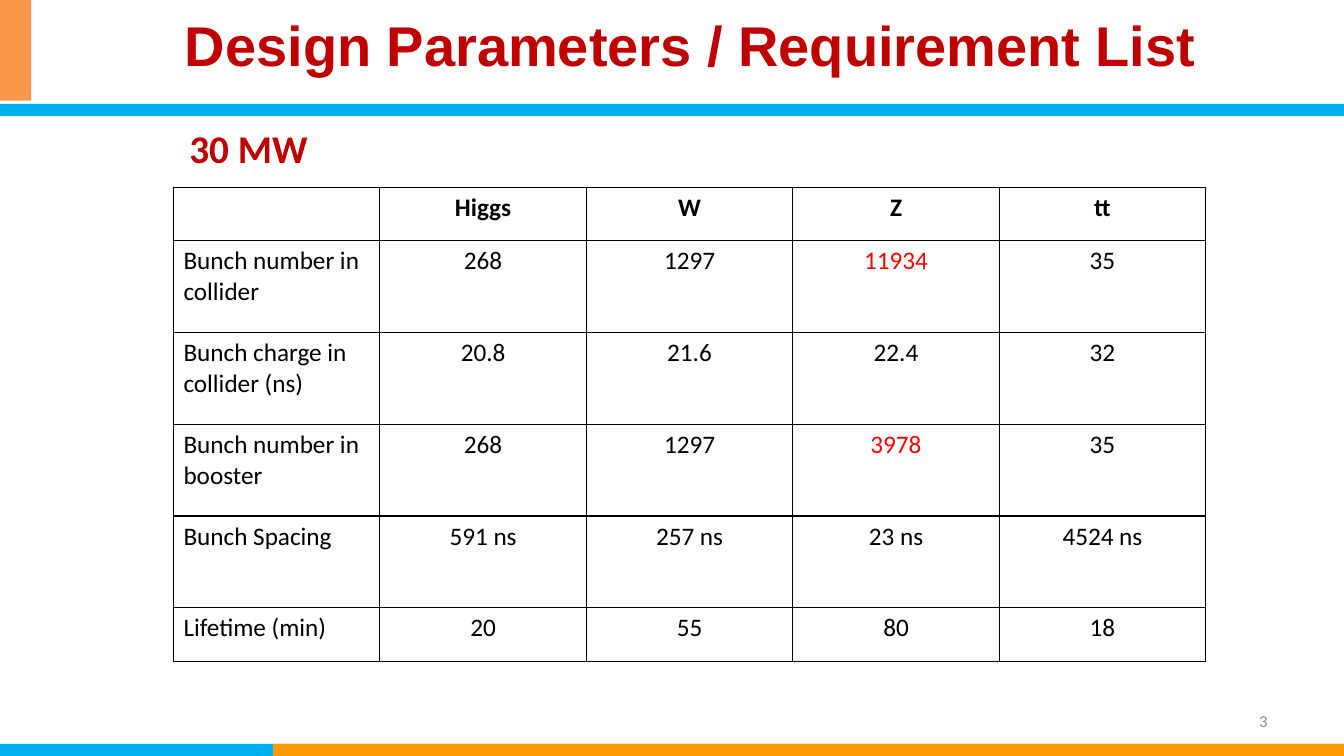
from dataclasses import dataclass

from lxml import etree
from pptx import Presentation
from pptx.dml.color import RGBColor
from pptx.enum.shapes import MSO_SHAPE
from pptx.enum.text import MSO_ANCHOR, PP_ALIGN
from pptx.oxml.ns import qn
from pptx.util import Inches, Pt

RECT = MSO_SHAPE.RECTANGLE
TOP, MIDDLE = MSO_ANCHOR.TOP, MSO_ANCHOR.MIDDLE
LEFT, CENTER, RIGHT = PP_ALIGN.LEFT, PP_ALIGN.CENTER, PP_ALIGN.RIGHT


@dataclass(frozen=True)
class Theme:
    blue: str = "00B0F0"
    orange: str = "FF9900"
    peach: str = "F79646"
    white: str = "FFFFFF"
    crimson: str = "C00000"
    red: str = "FF0000"
    black: str = "000000"
    grey: str = "8C8C8C"
    head: str = "Arial"
    body: str = "Calibri"
    title: int = 40
    label: int = 28
    cell: int = 18
    small: int = 12


THEME = Theme()


@dataclass(frozen=True)
class Box:
    left: float
    top: float
    width: float
    height: float

    def place(self) -> list:
        return [Inches(v) for v in (self.left, self.top, self.width, self.height)]


@dataclass(frozen=True)
class Band:
    box: Box
    color: str


@dataclass(frozen=True)
class Style:
    size: int
    color: str
    font: str = THEME.body
    bold: bool = False
    align: PP_ALIGN = LEFT
    anchor: MSO_ANCHOR = TOP
    space: float = 1.0


@dataclass(frozen=True)
class Label:
    box: Box
    text: str
    style: Style


BANDS = [
    Band(Box(0, 7.38, 13.33, 0.12), THEME.blue),
    Band(Box(2.71, 7.38, 10.63, 0.12), THEME.orange),
    Band(Box(0, 1.03, 13.33, 0.12), THEME.blue),
    Band(Box(0, 0, 0.31, 1), THEME.peach),
]
TITLE = Label(
    Box(0.45, 0.08, 12.79, 0.8),
    "Design Parameters / Requirement List",
    Style(THEME.title, THEME.crimson, THEME.head, True, CENTER, MIDDLE, 0.9),
)
LABELS = [
    Label(Box(1.78, 1.18, 5.67, 0.57), "30 MW",
          Style(THEME.label, THEME.crimson, bold=True)),
    Label(Box(9.56, 6.95, 3.11, 0.4), "3",
          Style(THEME.small, THEME.grey, align=RIGHT, anchor=MIDDLE)),
]
GRID = Box(1.72, 1.86, 10.24, 4.69)
HEIGHTS = [0.53, 0.91, 0.91, 0.91, 0.91, 0.53]
ROWS = [
    ["", "Higgs", "W", "Z", "tt"],
    ["Bunch number in collider", "268", "1297", "11934", "35"],
    ["Bunch charge in collider (ns)", "20.8", "21.6", "22.4", "32"],
    ["Bunch number in booster", "268", "1297", "3978", "35"],
    ["Bunch Spacing", "591 ns", "257 ns", "23 ns", "4524 ns"],
    ["Lifetime (min)", "20", "55", "80", "18"],
]
MARKED = {"11934", "3978"}


def write(frame, text: str, style: Style) -> None:
    para = frame.paragraphs[0]
    para.alignment = style.align
    para.line_spacing = style.space
    run = para.add_run()
    run.text = text
    form = {"name": style.font, "size": Pt(style.size), "bold": style.bold}
    for key, value in form.items():
        setattr(run.font, key, value)
    run.font.color.rgb = RGBColor.from_string(style.color)


def add_band(slide, band: Band):
    shape = slide.shapes.add_shape(RECT, *band.box.place())
    shape.shadow.inherit = False
    shape.fill.solid()
    shape.fill.fore_color.rgb = RGBColor.from_string(band.color)
    shape.line.fill.background()
    return shape


def fill_frame(shape, label: Label) -> None:
    frame = shape.text_frame
    frame.word_wrap = True
    frame.vertical_anchor = label.style.anchor
    write(frame, label.text, label.style)


def add_border(cell) -> None:
    props = cell._tc.get_or_add_tcPr()
    for side in ("lnL", "lnR", "lnT", "lnB"):
        line = etree.SubElement(props, qn(f"a:{side}"), w=str(Pt(1)))
        fill = etree.SubElement(line, qn("a:solidFill"))
        etree.SubElement(fill, qn("a:srgbClr"), val=THEME.black)


def add_grid(slide) -> None:
    count = len(ROWS[0])
    table = slide.shapes.add_table(len(ROWS), count, *GRID.place()).table
    for flag in ("first_row", "horz_banding"):
        setattr(table, flag, False)
    for column in table.columns:
        column.width = Inches(GRID.width / count)
    for r, (height, texts) in enumerate(zip(HEIGHTS, ROWS)):
        table.rows[r].height = Inches(height)
        for c, text in enumerate(texts):
            cell = table.cell(r, c)
            add_border(cell)
            cell.fill.background()
            if text:
                color = THEME.red if text in MARKED else THEME.black
                align = CENTER if c else LEFT
                style = Style(THEME.cell, color, bold=r == 0, align=align)
                write(cell.text_frame, text, style)


def main() -> None:
    deck = Presentation()
    deck.slide_width, deck.slide_height = Inches(13.33), Inches(7.5)
    slide = deck.slides.add_slide(deck.slide_layouts[6])
    for band in BANDS:
        add_band(slide, band)
    fill_frame(add_band(slide, Band(TITLE.box, THEME.white)), TITLE)
    for label in LABELS:
        fill_frame(slide.shapes.add_textbox(*label.box.place()), label)
    add_grid(slide)
    deck.save("out.pptx")


if __name__ == "__main__":
    main()
